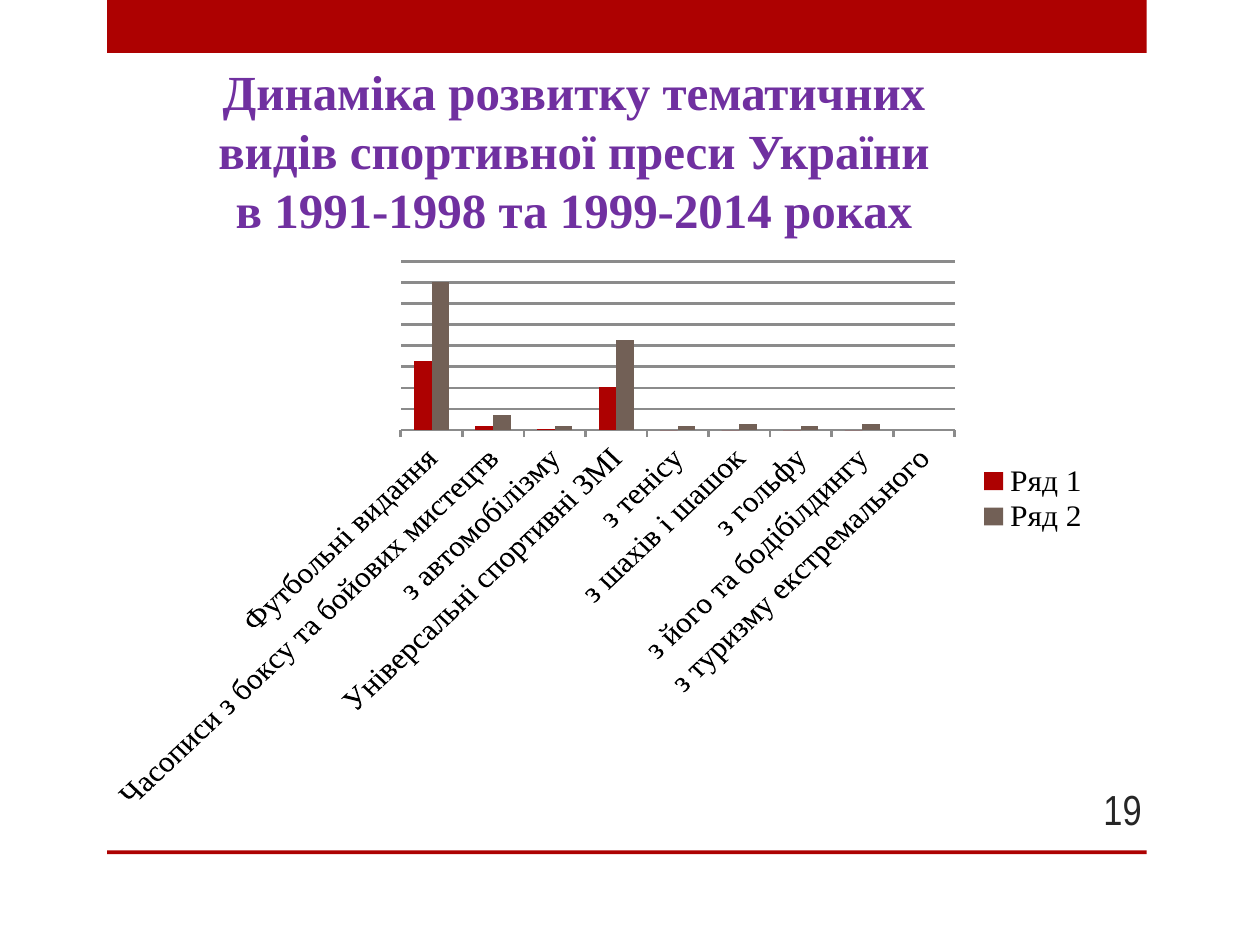
from lxml import etree
from pptx import Presentation
from pptx.chart.data import CategoryChartData
from pptx.dml.color import RGBColor
from pptx.enum.chart import XL_CHART_TYPE as ChartType, XL_LEGEND_POSITION as LegendSide
from pptx.enum.chart import XL_TICK_LABEL_POSITION as LabelSide, XL_TICK_MARK as Tick
from pptx.enum.shapes import MSO_SHAPE as Preset
from pptx.enum.text import MSO_ANCHOR as Anchor, MSO_AUTO_SIZE as AutoSize, PP_ALIGN as Align
from pptx.oxml.ns import qn
from pptx.util import Inches, Pt

RED, BROWN, GREY = "AD0101", "726056", "8B8B8B"
SERIF = "Times New Roman"
TOPICS = [
    "Футбольні видання", "Часописи з боксу та бойових мистецтв", "з автомобілізму",
    "Універсальні спортивні ЗМІ", "з тенісу", "з шахів і шашок", "з гольфу",
    "з його та бодібілдингу", "з туризму екстремального",
]
PERIODS = [
    ("Ряд 1", RED, [47, 3, 1, 29, 0, 0, 0, 0, None]),
    ("Ряд 2", BROWN, [100, 10, 3, 61, 3, 4, 3, 4, None]),
]
GRID_STEP = 14.29
LEGEND_LAYOUT = {"xMode": "edge", "yMode": "edge", "x": 0.87, "y": 0.4, "w": 0.12, "h": 0.14}


def color(hex_string):
    """Turn a hex string into a colour."""
    return RGBColor.from_string(hex_string)


def apply(target, formats):
    """Set each attribute of the target from a dict."""
    for attribute, value in formats.items():
        setattr(target, attribute, value)


def style_font(font, hex_string, size, **formats):
    """Set a font's colour, size and other formats."""
    font.color.rgb = color(hex_string)
    apply(font, {"size": Pt(size), **formats})


def style_line(line, hex_string, width):
    """Set a line's colour and width."""
    line.color.rgb = color(hex_string)
    line.width = Pt(width)


def add_band(slide, box):
    """Add a plain red band."""
    band = slide.shapes.add_shape(Preset.RECTANGLE, *map(Inches, box))
    band.shadow.inherit = False
    band.fill.solid()
    band.fill.fore_color.rgb = color(RED)
    band.line.fill.background()


def add_label(slide, box, wording, align, frame_formats, hex_string, size, **font_formats):
    """Add one wrapped paragraph of text."""
    frame = slide.shapes.add_textbox(*map(Inches, box)).text_frame
    apply(frame, {"word_wrap": True, **frame_formats})
    paragraph = frame.paragraphs[0]
    paragraph.alignment = align
    run = paragraph.add_run()
    run.text = wording
    style_font(run.font, hex_string, size, **font_formats)


def place_legend(legend):
    """Fix the legend's box within the chart."""
    element = legend._element
    for old_layout in element.findall(qn("c:layout")):
        element.remove(old_layout)
    layout = etree.Element(qn("c:layout"))
    manual = etree.SubElement(layout, qn("c:manualLayout"))
    for tag, value in LEGEND_LAYOUT.items():
        etree.SubElement(manual, qn(f"c:{tag}")).set("val", str(value))
    element.find(qn("c:legendPos")).addnext(layout)


def add_press_chart(slide, box):
    """Add the clustered columns that compare the two periods by topic."""
    press_data = CategoryChartData()
    press_data.categories = TOPICS
    for name, _, values in PERIODS:
        press_data.add_series(name, values)
    chart = slide.shapes.add_chart(
        ChartType.COLUMN_CLUSTERED, *map(Inches, box), press_data).chart
    apply(chart, {"has_title": False, "has_legend": True})
    apply(chart.legend, {"position": LegendSide.RIGHT, "include_in_layout": False})
    apply(chart.plots[0], {"gap_width": 150, "overlap": 0, "vary_by_categories": False})
    for series, (_, fill, _) in zip(chart.plots[0].series, PERIODS):
        series.format.fill.solid()
        series.format.fill.fore_color.rgb = color(fill)
        series.invert_if_negative = False

    topics, scale = chart.category_axis, chart.value_axis
    apply(topics, {"major_tick_mark": Tick.OUTSIDE, "has_major_gridlines": False,
                   "tick_label_position": LabelSide.NEXT_TO_AXIS})
    apply(scale, {"minimum_scale": 0, "maximum_scale": 8 * GRID_STEP,
                  "major_unit": GRID_STEP, "has_major_gridlines": True, "visible": False})
    for line in (topics.format.line, scale.major_gridlines.format.line):
        style_line(line, GREY, 1.5)
    for font in (chart.font, topics.tick_labels.font, chart.legend.font):
        style_font(font, "000000", 18, name=SERIF)
    place_legend(chart.legend)


def main():
    """Build and save the slide."""
    deck = Presentation()
    apply(deck, {"slide_width": Inches(10), "slide_height": Inches(7.5)})
    slide = deck.slides.add_slide(deck.slide_layouts[6])
    add_band(slide, (0.85, 0, 8.25, 0.42))
    add_band(slide, (0.85, 6.75, 8.25, 0.03))
    add_label(slide, (8.33, 6.22, 0.83, 0.4), "19", Align.RIGHT,
              {"vertical_anchor": Anchor.MIDDLE}, "262626", 24, name="Arial Narrow")
    add_press_chart(slide, (0.75, 1.99, 8.01, 4.45))
    add_label(slide, (1.61, 0.44, 5.89, 1.51),
              "Динаміка розвитку тематичних видів спортивної преси України "
              "в 1991-1998 та 1999-2014 роках",
              Align.CENTER, {"auto_size": AutoSize.SHAPE_TO_FIT_TEXT},
              "7030A0", 28, name=SERIF, bold=True)
    deck.save("out.pptx")


if __name__ == "__main__":
    main()
